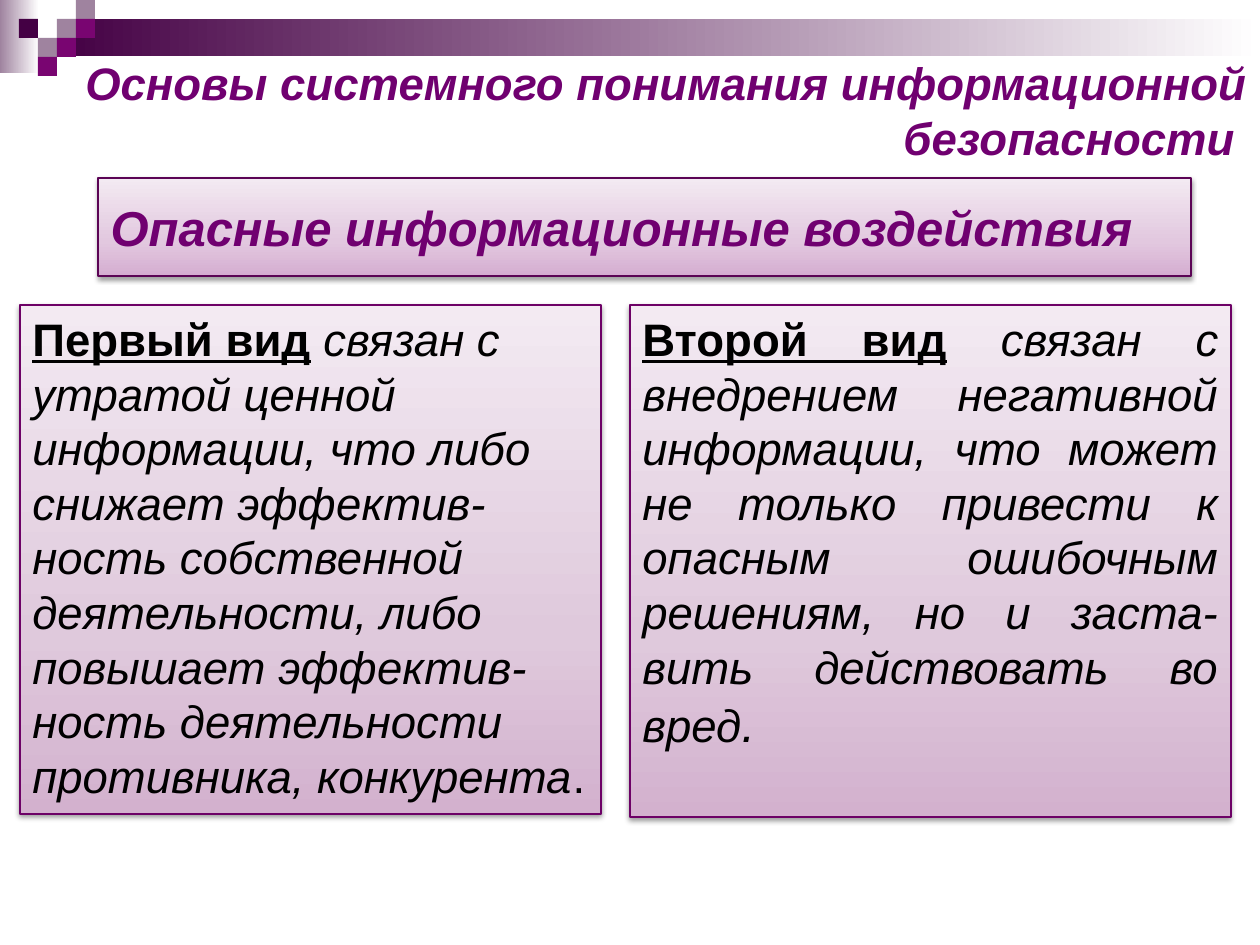
from lxml import etree
from pptx import Presentation
from pptx import util as u
from pptx.dml.color import RGBColor
from pptx.enum import shapes, text
from pptx.oxml.ns import qn

PX_PER_INCH = 126
CELL = 19
PURPLE = "700070"
PANEL_STOPS = [(0, "D3B1CE"), (35, "DFC9DC"), (100, "F3EAF2")]
HEADING_STOPS = [(0, "D5ADD1"), (35, "E2C8DF"), (100, "F3EAF2")]


def px(count):
    return u.Emu(round(count * 914400 / PX_PER_INCH))


def colour(code):
    return RGBColor.from_string(code)


def place(shape, box):
    shape.left, shape.top, shape.width, shape.height = map(px, box)


def add_element(parent, tag, **attributes):
    return etree.SubElement(parent, qn(tag), attributes)


def fill_gradient(shape, stops, angle):
    shape.fill.gradient()
    shape.fill.gradient_angle = angle
    stop_list = shape.element.spPr.find(".//" + qn("a:gsLst"))
    for stop in list(stop_list):
        stop_list.remove(stop)
    for position, code in stops:
        stop = add_element(stop_list, "a:gs", pos=str(position * 1000))
        add_element(stop, "a:srgbClr", val=code)


def add_shadow(shape):
    shape.shadow.inherit = False
    effects = shape.element.spPr.find(qn("a:effectLst"))
    shadow = add_element(effects, "a:outerShdw", blurRad=str(u.Pt(3.1)),
                         dist=str(u.Pt(1.6)), dir="5400000", rotWithShape="0")
    shade = add_element(shadow, "a:srgbClr", val="000000")
    add_element(shade, "a:alpha", val="38000")


def style_panel(shape, stops, line):
    fill_gradient(shape, stops, 90)
    shape.line.color.rgb = colour(line)
    shape.line.width = u.Pt(0.75)
    add_shadow(shape)


def style_font(font, size, code, bold=None, italic=None):
    font.name = "Arial"
    font.size = u.Pt(size)
    font.color.rgb = colour(code)
    font.bold = bold
    font.italic = italic


def add_rectangle(page, box):
    shape = page.shapes.add_shape(shapes.MSO_SHAPE.RECTANGLE, *map(px, box))
    shape.shadow.inherit = False
    return shape


def add_banner(page, box):
    left, top, width, height = box
    bars = [((left, top, 39, 73), "9F839F"),
            ((left + 57, top + CELL, width - 57, 37), "440044")]
    for bar_box, start in bars:
        bar = add_rectangle(page, bar_box)
        fill_gradient(bar, [(0, start), (100, "FFFFFF")], 0)
        bar.line.fill.background()
    mosaic = [(3, 1, "9F839F"), (4, 0, "9F839F"), (4, 1, "790571"),
              (2, 2, "9F839F"), (1, 1, "440044"), (3, 2, "790571"),
              (2, 3, "790571")]
    for column, row, code in mosaic:
        tile = add_rectangle(page, (left + column * CELL, top + row * CELL, CELL, CELL))
        tile.fill.solid()
        tile.fill.fore_color.rgb = colour(code)
        tile.line.fill.background()


def add_topic(page, box):
    topic = page.shapes.add_textbox(*map(px, box))
    topic.text_frame.word_wrap = True
    para = topic.text_frame.paragraphs[0]
    para.text = "Основы системного понимания информационной безопасности "
    para.alignment = text.PP_ALIGN.RIGHT
    style_font(para.font, 26, PURPLE, True, True)


def add_heading(page, box):
    heading = page.shapes.title
    place(heading, box)
    style_panel(heading, HEADING_STOPS, "5B0455")
    frame = heading.text_frame
    frame.auto_size = text.MSO_AUTO_SIZE.NONE
    frame.vertical_anchor = text.MSO_ANCHOR.MIDDLE
    para = frame.paragraphs[0]
    para.text = "Опасные информационные воздействия"
    para.alignment = text.PP_ALIGN.LEFT
    style_font(para.font, 28, PURPLE, True, True)


def add_kind(page, box, name, description, alignment, stop_size, stop_italic):
    panel = add_rectangle(page, box)
    style_panel(panel, PANEL_STOPS, "6D0166")
    frame = panel.text_frame
    frame.word_wrap = True
    frame.vertical_anchor = text.MSO_ANCHOR.TOP
    para = frame.paragraphs[0]
    para.alignment = alignment
    style_font(para.font, 26, "000000")
    spans = [(name, 26, True, False), (" ", 26, False, False),
             (description, 26, False, True), (".", stop_size, False, stop_italic)]
    for words, size, bold, italic in spans:
        span = para.add_run()
        span.text = words
        style_font(span.font, size, "000000", bold, italic)
        span.font.underline = bold


def main():
    deck = Presentation()
    deck.slide_width, deck.slide_height = px(1260), px(945)
    page = deck.slides.add_slide(deck.slide_layouts[5])
    add_banner(page, (0, 0, 1260, 75))
    add_heading(page, (98, 178, 1093, 98))
    add_topic(page, (69, 49, 1191, 123))
    add_kind(page, (20, 305, 581, 509), "Первый вид",
             "связан с утратой ценной информации, что либо снижает "
             "эффектив-ность собственной деятельности, либо повышает "
             "эффектив-ность деятельности противника, конкурента",
             text.PP_ALIGN.LEFT, 26, False)
    add_kind(page, (630, 305, 601, 512), "Второй вид",
             "связан с внедрением негативной информации, что может не "
             "только привести к опасным ошибочным решениям, но и "
             "заста-вить действовать во вред",
             text.PP_ALIGN.JUSTIFY, 28, True)
    deck.save("out.pptx")


if __name__ == "__main__":
    main()
